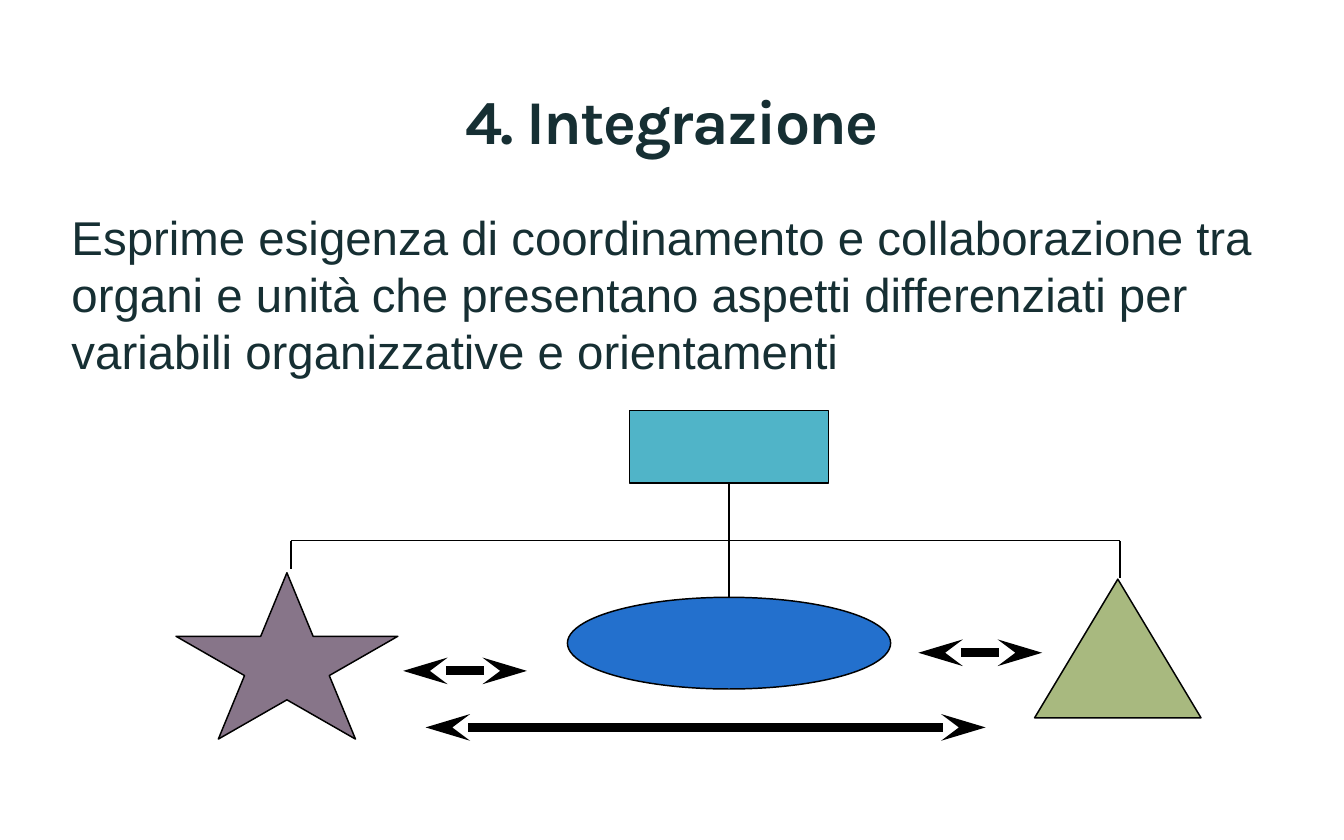
from lxml.etree import SubElement
from pptx import Presentation
from pptx.dml.color import RGBColor
from pptx.enum.shapes import MSO_CONNECTOR, MSO_SHAPE
from pptx.enum.text import MSO_ANCHOR, PP_ALIGN
from pptx.oxml.ns import qn
from pptx.util import Inches, Pt

# Slide of 16:10, ten grid units to the inch
WIDE = Inches(12.6)
HIGH = WIDE * 10 // 16
COLS, ROWS = 126, 78.75
INK, BLACK = "162F33", "000000"


def color(code):
    return RGBColor.from_string(code)


class Board:
    """Style and current slide; lengths are grid columns and rows."""

    def __init__(self, deck):
        self.slide = deck.slides.add_slide(deck.slide_layouts[5])
        self.shapes = self.slide.shapes

    def col(self, n):
        return round(n * WIDE / COLS)

    def row(self, n):
        return round(n * HIGH / ROWS)

    def box(self, x, y, w, h):
        return self.col(x), self.row(y), self.col(w), self.row(h)

    def run(self, para, text, size, face, bold=False):
        run = para.add_run()
        run.text = text
        font = run.font
        font.size, font.name, font.bold = Pt(size), face, bold
        font.color.rgb = color(INK)
        return run

    def title(self, text, *area):
        head = self.shapes.title
        head.left, head.top, head.width, head.height = self.box(*area)
        frame = head.text_frame
        frame.vertical_anchor = MSO_ANCHOR.MIDDLE
        para = frame.paragraphs[0]
        para.alignment = PP_ALIGN.CENTER
        para.line_spacing = 0.85
        run = self.run(para, text, 42, "Karla", True)
        run.font._element.set("spc", "-110")

    def text(self, text, *area):
        frame = self.shapes.add_textbox(*self.box(*area)).text_frame
        frame.word_wrap = True
        frame.margin_left = frame.margin_right = Inches(0.12)
        frame.margin_top = frame.margin_bottom = Inches(0.06)
        self.run(frame.paragraphs[0], text, 32, "Arial")

    def shape(self, kind, fill, *area):
        item = self.shapes.add_shape(kind, *self.box(*area))
        item.shadow.inherit = False
        item.fill.solid()
        item.fill.fore_color.rgb = color(fill)
        item.line.color.rgb = color(BLACK)
        item.line.width = Pt(1)
        return item

    def line(self, x1, y1, x2, y2, width=1.0):
        item = self.shapes.add_connector(
            MSO_CONNECTOR.STRAIGHT,
            self.col(x1), self.row(y1), self.col(x2), self.row(y2))
        item.line.color.rgb = color(BLACK)
        item.line.width = Pt(width)
        SubElement(item._element.spPr, qn("a:effectLst"))
        return item

    def arrow(self, x1, x2, y):
        ln = self.line(x1, y, x2, y, 6).line._get_or_add_ln()
        for end in ("a:headEnd", "a:tailEnd"):
            SubElement(ln, qn(end), type="stealth", w="med", len="lg")


def main():
    deck = Presentation()
    deck.slide_width, deck.slide_height = WIDE, HIGH
    board = Board(deck)

    # Title and definition
    board.title("4. Integrazione", 6.3, 3.9, 113.4, 15.8)
    board.text("Esprime esigenza di coordinamento e collaborazione tra "
               "organi e unità che presentano aspetti differenziati per "
               "variabili organizzative e orientamenti",
               5.5, 18.9, 114.5, 17.2)

    # Head office and the three units
    head = board.shape(MSO_SHAPE.RECTANGLE, "50B4C8", 59, 38.5, 18.7, 6.8)
    oval = board.shape(MSO_SHAPE.OVAL, "2370CD", 53.2, 56, 30.3, 8.6)
    board.shape(MSO_SHAPE.ISOSCELES_TRIANGLE, "A8B97F", 97, 54.3, 15.6, 13)
    board.shape(MSO_SHAPE.STAR_5_POINT, "877589", 16.5, 53.7, 20.8, 15.6)

    # Branches of the tree
    left, right, bar = 27.3, 105, 50.7
    stem = board.line(68.3, 45.3, 68.3, 56)
    stem.begin_connect(head, 2)
    stem.end_connect(oval, 0)
    board.line(left, bar, right, bar, 0.75)
    board.line(left, bar, left, 53.3)
    board.line(right, bar, right, 54.2)

    # Links between units
    for x1, x2, y in ((37.8, 49.4, 62.9), (86.1, 97.7, 61.2),
                      (39.9, 92.4, 68.2)):
        board.arrow(x1, x2, y)

    deck.save("out.pptx")


if __name__ == "__main__":
    main()
